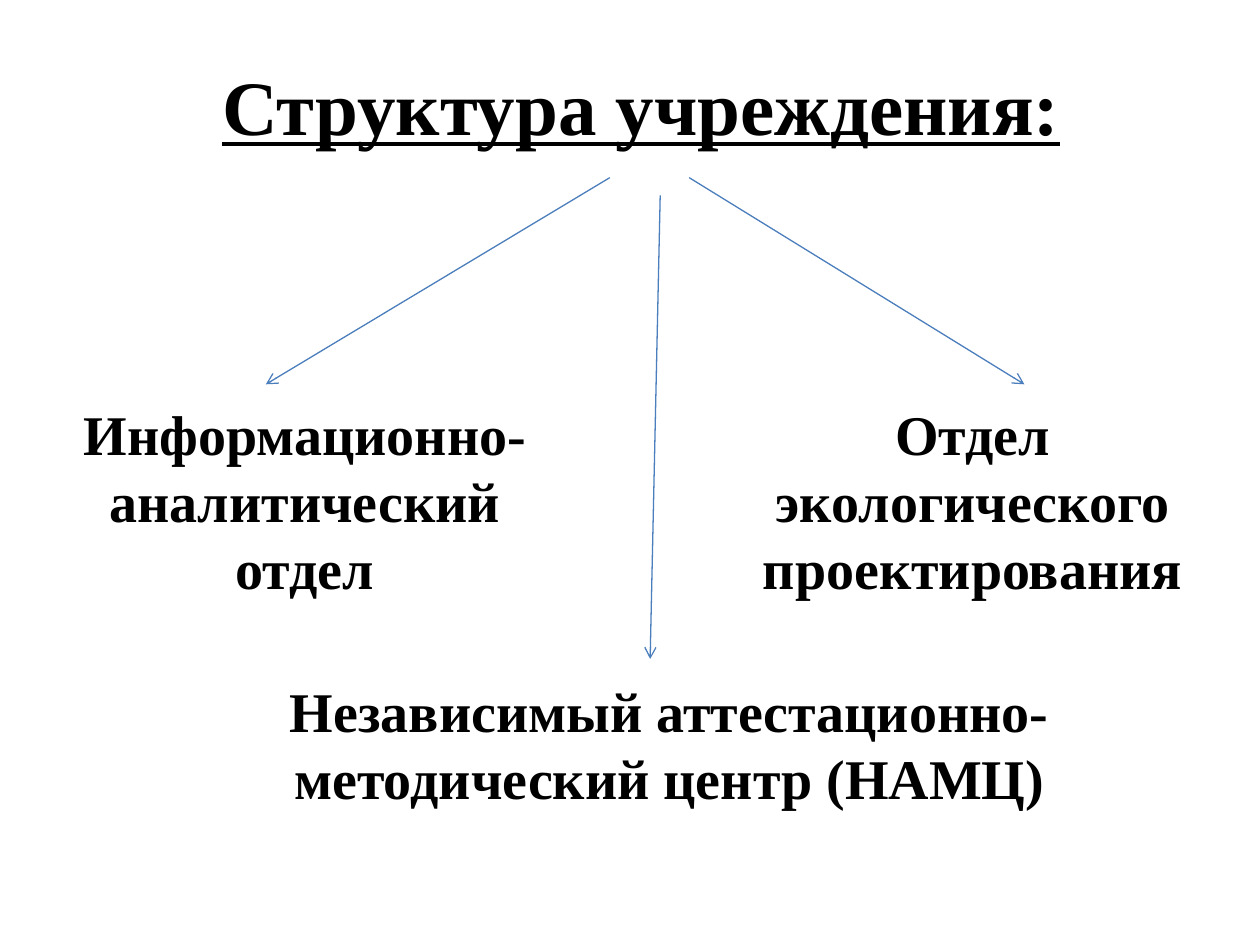
"""Build the slide showing the structure of the institution."""
from lxml import etree
from pptx import Presentation
from pptx import util as u
from pptx.dml.color import RGBColor
from pptx.enum import shapes, text
from pptx.oxml.ns import qn

WIDTH, HEIGHT = 10, 7.5
FONT = "Times New Roman"
COLORS = {"text": "000000", "arrow": "4B7EBC"}
DEPARTMENTS = [
    ("Отдел экологического проектирования", (5.63, 3.12, 4.18, 1.72)),
    ("Информационно-аналитический отдел", (0.31, 3.12, 4.22, 1.72)),
    ("Независимый аттестационно-методический центр (НАМЦ)", (1.93, 5.32, 6.77, 1.18)),
]
ARROWS = [
    ((5.47, 1.41), (8.13, 3.05)),
    ((5.24, 1.55), (5.16, 5.23)),
    ((4.84, 1.41), (2.11, 3.05)),
]


def write(shape, wording, size, underline=False):
    """Put centred bold wording into a shape."""
    frame = shape.text_frame
    frame.text = wording
    frame.word_wrap = True
    paragraph = frame.paragraphs[0]
    paragraph.alignment = text.PP_ALIGN.CENTER
    font = paragraph.runs[0].font
    font.name, font.size, font.bold = FONT, u.Pt(size), True
    font.underline = underline
    font.color.rgb = RGBColor.from_string(COLORS["text"])


def add_title(slide, wording, box):
    """Place and format the title placeholder."""
    title = slide.shapes.title
    title.left, title.top, title.width, title.height = map(u.Inches, box)
    write(title, wording, 44, underline=True)
    title.text_frame.vertical_anchor = text.MSO_ANCHOR.MIDDLE


def add_department(slide, wording, box):
    """Add the name of one department."""
    shape = slide.shapes.add_textbox(*map(u.Inches, box))
    write(shape, wording, 32)
    shape.text_frame.auto_size = text.MSO_AUTO_SIZE.SHAPE_TO_FIT_TEXT


def add_arrow(slide, start, end):
    """Add a thin arrow with an open head at its end."""
    arrow = slide.shapes.add_connector(
        shapes.MSO_CONNECTOR.STRAIGHT, *map(u.Inches, start + end))
    arrow.line.width = u.Pt(0.75)
    arrow.line.color.rgb = RGBColor.from_string(COLORS["arrow"])
    etree.SubElement(arrow.line._get_or_add_ln(), qn("a:tailEnd"), type="arrow")
    etree.SubElement(arrow._element.spPr, qn("a:effectLst"))


def main():
    """Assemble and save the presentation."""
    presentation = Presentation()
    presentation.slide_width = u.Inches(WIDTH)
    presentation.slide_height = u.Inches(HEIGHT)
    slide = presentation.slides.add_slide(presentation.slide_layouts[5])
    add_title(slide, "Структура учреждения:", (0.59, 0.21, 9, 1.25))
    for start, end in ARROWS:
        add_arrow(slide, start, end)
    for wording, box in DEPARTMENTS:
        add_department(slide, wording, box)
    presentation.save("out.pptx")


if __name__ == "__main__":
    main()
